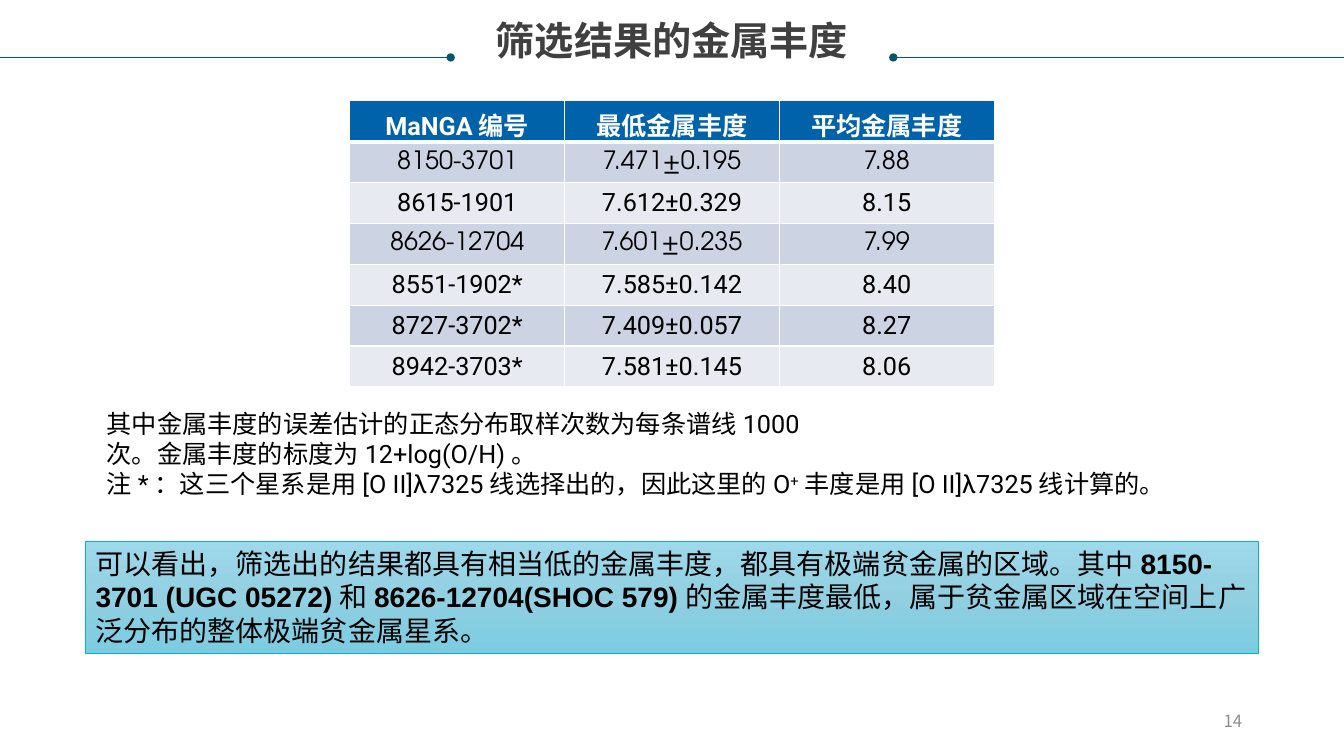
from dataclasses import dataclass

from lxml import etree
from pptx import Presentation
from pptx.dml.color import RGBColor
from pptx.enum import shapes, text
from pptx.oxml import ns
from pptx.util import Inches, Pt

COLORS = {
    "title": "404040", "rule": "085764", "head": "0062A9", "odd": "CCD3E2",
    "even": "E7EAF1", "white": "FFFFFF", "black": "000000", "number": "8C8C8C",
    "edge": "11AEC7", "top": "9ED9EB", "middle": "91CFE1", "bottom": "7CCCE1",
}
CJK, SANS, GEO = "Noto Sans CJK SC", "Roboto", "TeX Gyre Adventor"
ALIGN = text.PP_ALIGN
MIDDLE = text.MSO_ANCHOR.MIDDLE


@dataclass
class Run:
    words: str
    font: str = SANS
    bold: bool = False
    raised: bool = False


@dataclass
class Rule:
    start: float
    end: float
    dot: str


@dataclass
class Row:
    cells: tuple[str, str, str]
    font: str = SANS


RULES = [Rule(0, 4.47, "tailEnd"), Rule(8.86, 13.33, "headEnd")]
ROWS = [
    Row(("MaNGA编号", "最低金属丰度", "平均金属丰度")),
    Row(("8150-3701", "7.471±0.195", "7.88"), GEO),
    Row(("8615-1901", "7.612±0.329", "8.15")),
    Row(("8626-12704", "7.601±0.235", "7.99"), GEO),
    Row(("8551-1902*", "7.585±0.142", "8.40")),
    Row(("8727-3702*", "7.409±0.057", "8.27")),
    Row(("8942-3703*", "7.581±0.145", "8.06")),
]
NOTES = [
    [Run("其中金属丰度的误差估计的正态分布取样次数为每条谱线1000\v次。金属丰度的标度为12+log(O/H)。")],
    [Run("注*：这三个星系是用[O II]λ7325线选择出的，因此这里的O"),
     Run("+", raised=True), Run("丰度是用[O II]λ7325线计算的。")],
]
RESULT = [
    Run("可以看出，筛选出的结果都具有相当低的金属丰度，都具有极端贫金属的区域。其中"),
    Run("8150-3701 (UGC 05272)", "Arial", True),
    Run("和"),
    Run("8626-12704(SHOC 579)", "Arial", True),
    Run("的金属丰度最低，属于贫金属区域在空间上广泛分布的整体极端贫金属星系。"),
]


def paint(name: str) -> RGBColor:
    return RGBColor.from_string(COLORS[name])


def node(parent, tag: str, **attrs: str):
    return etree.SubElement(parent, ns.qn(f"a:{tag}"), attrs)


def write(frame, paras: list[list[Run]], *, size: float, color: str = "black",
          align=ALIGN.LEFT, spacing: float | None = None) -> None:
    """Fill a text frame with paragraphs of runs."""
    for i, runs in enumerate(paras):
        para = frame.paragraphs[0] if i == 0 else frame.add_paragraph()
        para.alignment = align
        if spacing:
            para.line_spacing = spacing
        for part in runs:
            for j, line in enumerate(part.words.split("\v")):
                if j:
                    para.add_line_break()
                run = para.add_run()
                run.text = line
                font = run.font
                font.name, font.size, font.bold = part.font, Pt(size), part.bold
                font.color.rgb = paint(color)
                props = font._element
                node(props, "ea", typeface=CJK)
                if part.raised:
                    props.set("baseline", "30000")


def add_box(slide, left: float, top: float, width: float, height: float):
    frame = slide.shapes.add_textbox(
        Inches(left), Inches(top), Inches(width), Inches(height)).text_frame
    frame.word_wrap = True
    return frame


def add_rule(slide, rule: Rule) -> None:
    line = slide.shapes.add_connector(
        shapes.MSO_CONNECTOR.STRAIGHT,
        Inches(rule.start), Inches(0.57), Inches(rule.end), Inches(0.57))
    line.line.color.rgb = paint("rule")
    line.line.width = Pt(0.5)
    node(line.line._get_or_add_ln(), rule.dot, type="oval")
    node(line._element.spPr, "effectLst")


def add_border(cell, heavy: str) -> None:
    """Draw white cell edges, with one heavier side if named."""
    props = cell._tc.get_or_add_tcPr()
    for i, side in enumerate(("lnL", "lnR", "lnT", "lnB")):
        edge = etree.Element(ns.qn(f"a:{side}"), w=str(Pt(3 if side == heavy else 1)))
        node(node(edge, "solidFill"), "srgbClr", val=COLORS["white"])
        props.insert(i, edge)


def add_grid(slide) -> None:
    grid = slide.shapes.add_table(
        len(ROWS), 3, Inches(3.47), Inches(1), Inches(6.39), Inches(2.84)).table
    for i, row in enumerate(ROWS):
        fill = "head" if i == 0 else "odd" if i % 2 else "even"
        heavy = {0: "lnB", 1: "lnT"}.get(i, "")
        for j, words in enumerate(row.cells):
            cell = grid.cell(i, j)
            cell.vertical_anchor = MIDDLE
            cell.fill.solid()
            cell.fill.fore_color.rgb = paint(fill)
            add_border(cell, heavy)
            write(cell.text_frame, [[Run(words, row.font, i == 0)]], size=18,
                  color="black" if i else "white", align=ALIGN.CENTER)


def add_result(slide) -> None:
    panel = slide.shapes.add_shape(
        shapes.MSO_SHAPE.RECTANGLE,
        Inches(0.85), Inches(5.37), Inches(11.63), Inches(1.11))
    panel.shadow.inherit = False
    panel.line.color.rgb = paint("edge")
    panel.line.width = Pt(0.5)
    grad = etree.Element(ns.qn("a:gradFill"), rotWithShape="1")
    stops = node(grad, "gsLst")
    for i, name in enumerate(("top", "middle", "bottom")):
        node(node(stops, "gs", pos=str(i * 50000)), "srgbClr", val=COLORS[name])
    node(grad, "lin", ang="5400000", scaled="0")
    panel._element.spPr.find(ns.qn("a:prstGeom")).addnext(grad)
    frame = panel.text_frame
    frame.word_wrap = True
    frame.vertical_anchor = text.MSO_ANCHOR.TOP
    frame.auto_size = text.MSO_AUTO_SIZE.SHAPE_TO_FIT_TEXT
    write(frame, [RESULT], size=20)


def main() -> None:
    deck = Presentation()
    deck.slide_width, deck.slide_height = Inches(13.33), Inches(7.5)
    slide = deck.slides.add_slide(deck.slide_layouts[6])
    for rule in RULES:
        add_rule(slide, rule)

    title = add_box(slide, 0.25, 0.21, 12.83, 0.42)
    title.margin_left = title.margin_right = title.margin_top = title.margin_bottom = 0
    write(title, [[Run("筛选结果的金属丰度", CJK, True)]], size=28, color="title",
          align=ALIGN.CENTER, spacing=0.9)

    add_grid(slide)
    add_result(slide)
    notes = add_box(slide, 0.96, 4, 11.16, 0.71)
    notes.auto_size = text.MSO_AUTO_SIZE.SHAPE_TO_FIT_TEXT
    write(notes, NOTES, size=18)

    number = add_box(slide, 9.42, 6.95, 3, 0.4)
    number.vertical_anchor = MIDDLE
    write(number, [[Run("14", CJK)]], size=12, color="number", align=ALIGN.RIGHT)
    deck.save("out.pptx")


if __name__ == "__main__":
    main()
